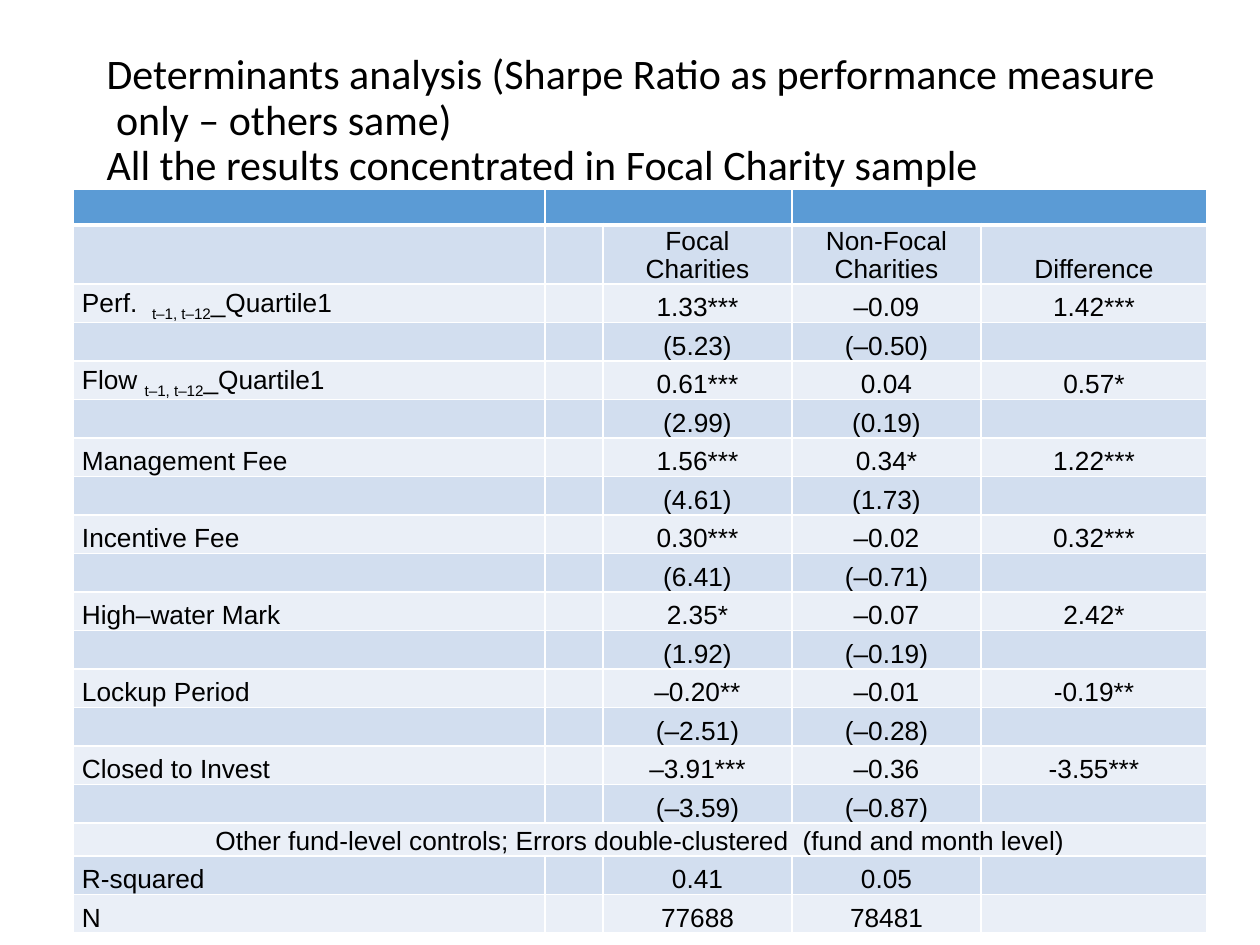
from lxml.etree import SubElement as Sub
from pptx import Presentation
from pptx.dml.color import RGBColor
from pptx.enum.text import MSO_ANCHOR as Anchor, MSO_AUTO_SIZE as Auto, PP_ALIGN as Align
from pptx.oxml.ns import qn
from pptx.util import Pt

PX = 914400 / 126
BLACK = RGBColor(0, 0, 0)
WHITE = RGBColor(255, 255, 255)
BLUE = RGBColor(0x5B, 0x9B, 0xD5)
DARK = RGBColor(0xD2, 0xDE, 0xEF)
LIGHT = RGBColor(0xEA, 0xEF, 0xF7)


def px(n):
    return round(n * PX)


def edge(cell, side, width):
    line = Sub(cell._tc.get_or_add_tcPr(), qn("a:ln" + side), w=str(Pt(width)))
    fill = Sub(line, qn("a:solidFill"))
    Sub(fill, qn("a:srgbClr"), val=str(WHITE))


LAG = "t–1, t–12"
NOTE = "Other fund-level controls; Errors double-clustered  (fund and month level)"
ROWS = [
    ("", "", "", ""),
    ("", "Focal Charities", "Non-Focal Charities", "Difference"),
    (f"Perf.  |{LAG}|_Quartile1", "1.33***", "–0.09", "1.42***"),
    ("", "(5.23)", "(–0.50)", ""),
    (f"Flow |{LAG}|_Quartile1", "0.61***", "0.04", "0.57*"),
    ("", "(2.99)", "(0.19)", ""),
    ("Management Fee", "1.56***", "0.34*", "1.22***"),
    ("", "(4.61)", "(1.73)", ""),
    ("Incentive Fee", "0.30***", "–0.02", "0.32***"),
    ("", "(6.41)", "(–0.71)", ""),
    ("High–water Mark", "2.35*", "–0.07", "2.42*"),
    ("", "(1.92)", "(–0.19)", ""),
    ("Lockup Period", "–0.20**", "–0.01", "-0.19**"),
    ("", "(–2.51)", "(–0.28)", ""),
    ("Closed to Invest", "–3.91***", "–0.36", "-3.55***"),
    ("", "(–3.59)", "(–0.87)", ""),
    (NOTE, "", "", ""),
    ("R-squared", "0.41", "0.05", ""),
    ("N", "77688", "78481", ""),
]
HEAD, NAMES, SPAN = 0, 1, 16
WIDTHS = [472, 58, 189, 189, 226]

deck = Presentation()
deck.slide_width, deck.slide_height = px(1260), px(945)
slide = deck.slides.add_slide(deck.slide_layouts[5])

title = slide.shapes.title
title.left, title.top, title.width, title.height = px(94), px(32), px(1155), px(179)
frame = title.text_frame
frame.text = (
    "Determinants analysis (Sharpe Ratio as performance measure\v"
    " only – others same)\v"
    "All the results concentrated in Focal Charity sample"
)
frame.auto_size = Auto.NONE
frame.word_wrap = True
frame.vertical_anchor = Anchor.MIDDLE
para = frame.paragraphs[0]
para.alignment = Align.LEFT
para.line_spacing = 0.9
para.font.size = Pt(24)
para.font.name = "Calibri"
para.font.color.rgb = BLACK

table = slide.shapes.add_table(
    len(ROWS), len(WIDTHS), px(73), px(189), px(sum(WIDTHS)), px(708)
).table
table.first_row = table.horz_banding = False
for col, width in zip(table.columns, WIDTHS):
    col.width = px(width)

for r, (label, *values) in enumerate(ROWS):
    table.rows[r].height = px({NAMES: 59, SPAN: 33}.get(r, 36))
    for c, text in enumerate([label, "", *values]):
        cell = table.cell(r, c)
        for side in "LRTB":
            thick = (r == HEAD and side == "B") or (r == NAMES and side == "T")
            edge(cell, side, 3 if thick else 1)
        cell.fill.solid()
        cell.fill.fore_color.rgb = BLUE if r == HEAD else DARK if r % 2 else LIGHT
        cell.vertical_anchor = Anchor.BOTTOM
        cell.margin_left = cell.margin_right = px(9)
        cell.margin_top = cell.margin_bottom = 0
        para = cell.text_frame.paragraphs[0]
        if not text:
            size = 15 if r in (HEAD, SPAN) else 18
            Sub(para._p, qn("a:endParaRPr"), sz=str(size * 100))
            continue
        para.alignment = Align.CENTER if c or r == SPAN else Align.LEFT
        if r == NAMES:
            para.line_spacing = 0.95
        para.font.size = Pt(15)
        para.font.name = "Arial"
        para.font.color.rgb = BLACK
        for i, part in enumerate(text.split("|")):
            run = para.add_run()
            run.text = part
            if i == 1:
                run.font._element.set("baseline", "-25000")

table.cell(HEAD, 1).merge(table.cell(HEAD, 2))
table.cell(HEAD, 3).merge(table.cell(HEAD, 4))
table.cell(SPAN, 0).merge(table.cell(SPAN, 4))

deck.save("out.pptx")
